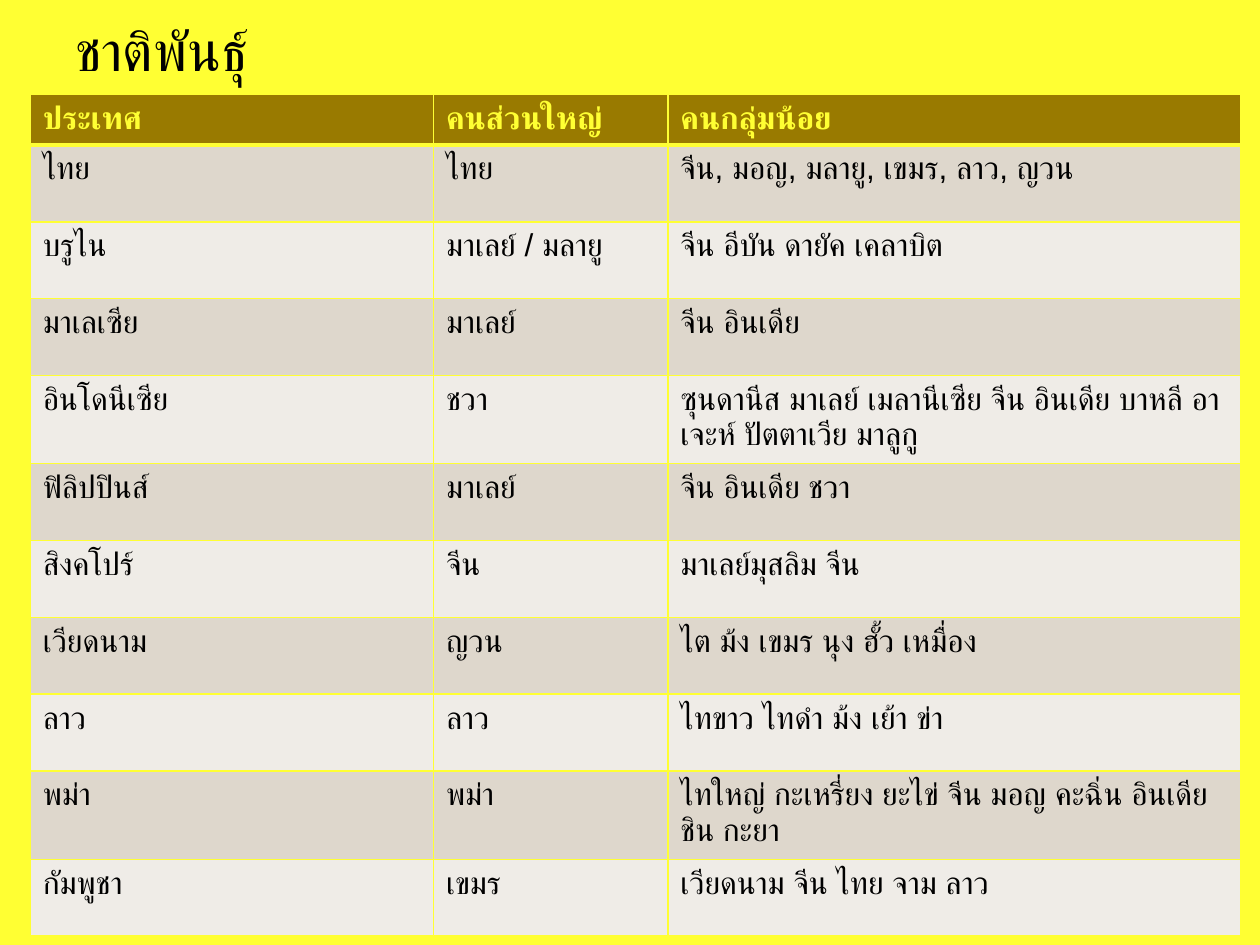
from lxml import etree
from pptx import Presentation
from pptx import util as u
from pptx.dml.color import RGBColor
from pptx.enum import text
from pptx.oxml import ns

COLORS = {
    "yellow": "FFFF33",
    "header": "997A00",
    "odd": "DED7CC",
    "even": "EFECE7",
    "ink": "000000",
}
FONT = "Arial"
COLUMN_WIDTHS = [3.2, 1.86, 4.55]
HEADER_HEIGHT, ROW_HEIGHT, TALL_HEIGHT = 0.4, 0.61, 0.68
TALL_ROWS = {4, 9}
ROWS = [
    ("ประเทศ", "คนส่วนใหญ่", "คนกลุ่มน้อย"),
    ("ไทย", "ไทย", "จีน, มอญ, มลายู, เขมร, ลาว, ญวน"),
    ("บรูไน", "มาเลย์ / มลายู", "จีน อีบัน ดายัค เคลาบิต"),
    ("มาเลเซีย", "มาเลย์", "จีน อินเดีย"),
    ("อินโดนีเซีย", "ชวา", "ซุนดานีส มาเลย์ เมลานีเซีย จีน อินเดีย บาหลี อาเจะห์ ปัตตาเวีย มาลูกู"),
    ("ฟิลิปปินส์", "มาเลย์", "จีน อินเดีย ชวา"),
    ("สิงคโปร์", "จีน", "มาเลย์มุสลิม จีน"),
    ("เวียดนาม", "ญวน", "ไต ม้ง เขมร นุง ฮั้ว เหมื่อง"),
    ("ลาว", "ลาว", "ไทขาว ไทดำ ม้ง เย้า ข่า"),
    ("พม่า", "พม่า", "ไทใหญ่ กะเหรี่ยง ยะไข่ จีน มอญ คะฉิ่น อินเดีย ชิน กะยา"),
    ("กัมพูชา", "เขมร", "เวียดนาม จีน ไทย จาม ลาว"),
]


def color(name):
    """Return the named colour."""
    return RGBColor.from_string(COLORS[name])


def write(frame, words, size, ink, bold=False):
    """Put one formatted paragraph into a text frame."""
    frame.text = words
    span = frame.paragraphs[0].runs[0]
    span.font.name = FONT
    span.font.size = u.Pt(size)
    span.font.bold = bold
    span.font.color.rgb = color(ink)
    etree.SubElement(span.font._element, ns.qn("a:cs"), typeface=FONT)


def add_title(slide, words):
    """Add the slide heading."""
    box = slide.shapes.add_textbox(u.Inches(0.5), u.Inches(-0.12), u.Inches(9), u.Inches(0.83))
    frame = box.text_frame
    frame.word_wrap = True
    frame.vertical_anchor = text.MSO_ANCHOR.BOTTOM
    write(frame, words, 32, "ink")


def set_borders(cell, top, bottom):
    """Draw the four yellow cell borders, with top and bottom widths in points."""
    properties = cell._tc.get_or_add_tcPr()
    widths = {"lnL": 1, "lnR": 1, "lnT": top, "lnB": bottom}
    for index, (tag, width) in enumerate(widths.items()):
        line = etree.Element(ns.qn(f"a:{tag}"), w=str(u.Pt(width)))
        fill = etree.SubElement(line, ns.qn("a:solidFill"))
        etree.SubElement(fill, ns.qn("a:srgbClr"), val=COLORS["yellow"])
        properties.insert(index, line)


def row_height(index):
    """Return the height of a row in inches."""
    if index == 0:
        return HEADER_HEIGHT
    return TALL_HEIGHT if index in TALL_ROWS else ROW_HEIGHT


def add_table(slide):
    """Add the banded table of countries and peoples."""
    heights = [row_height(index) for index in range(len(ROWS))]
    table = slide.shapes.add_table(
        len(ROWS), len(COLUMN_WIDTHS), u.Inches(0.24), u.Inches(0.75),
        u.Inches(sum(COLUMN_WIDTHS)), u.Inches(sum(heights))).table
    for column, width in zip(table.columns, COLUMN_WIDTHS):
        column.width = u.Inches(width)
    for index, (row, values) in enumerate(zip(table.rows, ROWS)):
        row.height = u.Inches(heights[index])
        is_header = index == 0
        band = "header" if is_header else ("odd" if index % 2 else "even")
        for cell, words in zip(row.cells, values):
            cell.fill.solid()
            cell.fill.fore_color.rgb = color(band)
            write(cell.text_frame, words, 18, "yellow" if is_header else "ink", is_header)
            set_borders(cell, 3 if index == 1 else 1, 3 if is_header else 1)


def main():
    """Build and save the slide."""
    deck = Presentation()
    deck.slide_width, deck.slide_height = u.Inches(10), u.Inches(7.5)
    slide = deck.slides.add_slide(deck.slide_layouts[6])
    slide.background.fill.solid()
    slide.background.fill.fore_color.rgb = color("yellow")
    add_title(slide, "ชาติพันธุ์")
    add_table(slide)
    deck.save("out.pptx")


if __name__ == "__main__":
    main()
